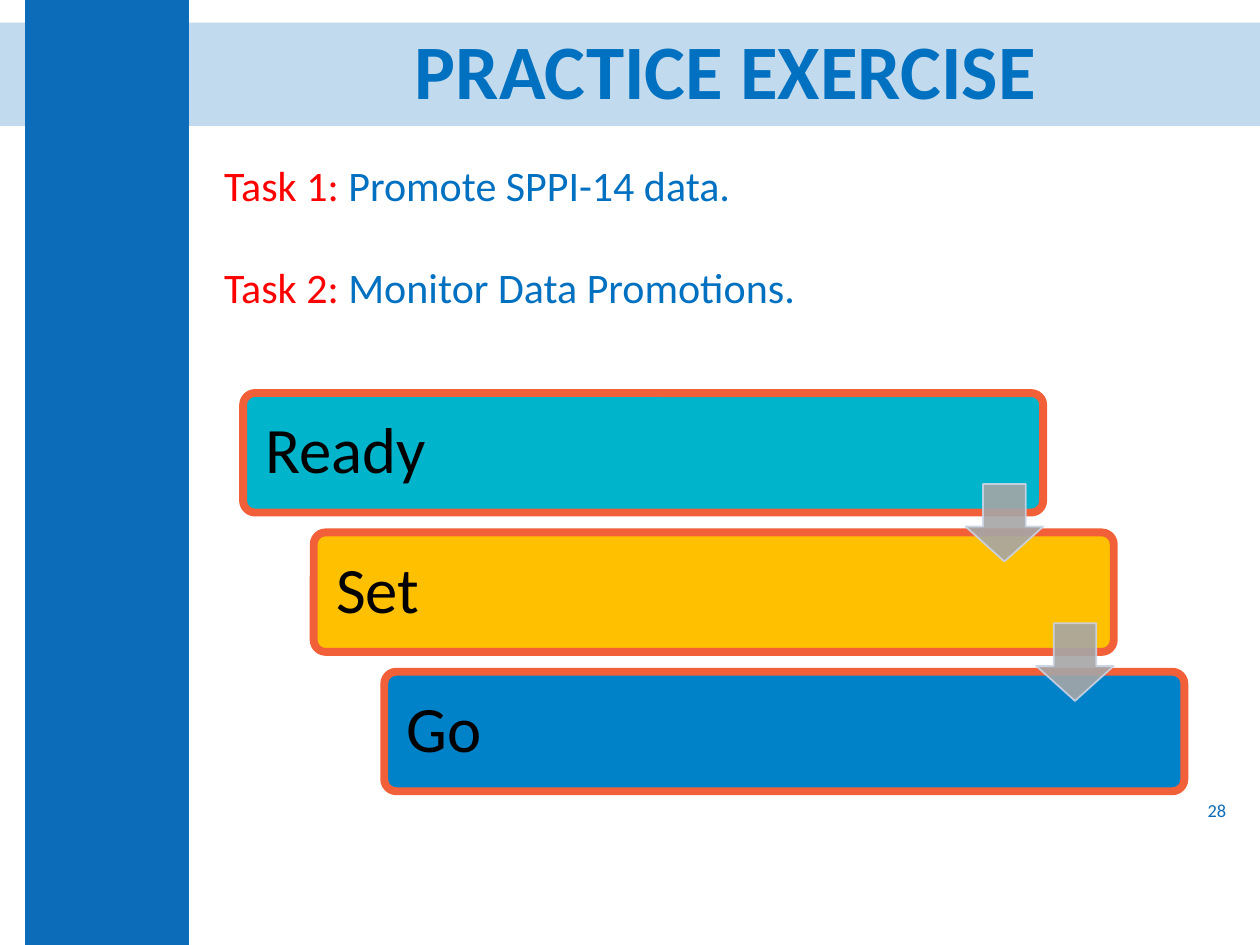
from lxml import etree
from pptx import Presentation
from pptx.dml.color import RGBColor
from pptx.enum.shapes import MSO_SHAPE as Shape
from pptx.enum.text import MSO_ANCHOR as Anchor, PP_ALIGN as Align
from pptx.oxml.ns import qn
from pptx.util import Inches, Pt

BRAND = RGBColor(0x0D, 0x6C, 0xB9)
BLUE = RGBColor(0x00, 0x70, 0xC0)
RED = RGBColor(0xFF, 0x00, 0x00)
BLACK = RGBColor(0x00, 0x00, 0x00)
ORANGE = RGBColor(0xF1, 0x60, 0x38)
TEAL = RGBColor(0x00, 0xB4, 0xCB)
AMBER = RGBColor(0xFF, 0xC0, 0x00)
AZURE = RGBColor(0x00, 0x82, 0xC8)
GREY = RGBColor(0xA6, 0xA6, 0xA6)
PALE = RGBColor(0xCC, 0xD4, 0xE6)

WIDTH, HEIGHT = 10, 7.5
HEADER_TOP, HEADER_HEIGHT = 0.18, 0.82
TASKS = [("Task 1:", " Promote SPPI-14 data."),
         ("Task 2:", " Monitor Data Promotions.")]
STEPS = [("Ready", TEAL), ("Set", AMBER), ("Go", AZURE)]


def set_alpha(fill_parent, percent):
    color = fill_parent.find(qn("a:solidFill"))[0]
    etree.SubElement(color, qn("a:alpha")).set("val", str(percent * 1000))


def style_run(run, size, color, bold=False):
    font = run.font
    font.name, font.size, font.bold = "Calibri", Pt(size), bold
    font.color.rgb = color


def add_block(slide, kind, box, fill, line=None, line_width=1):
    block = slide.shapes.add_shape(kind, *map(Inches, box))
    block.shadow.inherit = False
    block.fill.solid()
    block.fill.fore_color.rgb = fill
    if line is None:
        block.line.fill.background()
    else:
        block.line.color.rgb = line
        block.line.width = Pt(line_width)
    return block


def add_label(slide, box, text, size, color, align, bold=False):
    frame = slide.shapes.add_textbox(*map(Inches, box)).text_frame
    frame.word_wrap = True
    frame.vertical_anchor = Anchor.MIDDLE
    frame.text = text
    paragraph = frame.paragraphs[0]
    paragraph.alignment = align
    style_run(paragraph.runs[0], size, color, bold)
    return paragraph


def add_backdrop(slide):
    band = add_block(slide, Shape.RECTANGLE,
                     (0, HEADER_TOP, WIDTH, HEADER_HEIGHT), BRAND)
    set_alpha(band.element.spPr, 25)
    add_block(slide, Shape.RECTANGLE, (0.2, 0, 1.3, HEIGHT), BRAND)


def add_tasks(slide, box):
    frame = slide.shapes.add_textbox(*map(Inches, box)).text_frame
    frame.word_wrap = True
    for index, parts in enumerate(TASKS):
        paragraph = frame.add_paragraph() if index else frame.paragraphs[0]
        if index:
            paragraph.space_before = Pt(29.3)
        for part, color in zip(parts, (RED, BLUE)):
            run = paragraph.add_run()
            run.text = part
            style_run(run, 24, color)


def add_staircase(slide, box):
    """Steps shift right by equal amounts; an arrow links each to the next."""
    left, top, width, height = box
    gaps = len(STEPS) - 1
    step_width, step_height = width * 0.85, height * 0.3
    shift = (width - step_width) / gaps
    drop = (height - step_height) / gaps
    arrow = step_height * 0.65

    # Steps
    for index, (word, fill) in enumerate(STEPS):
        step = add_block(slide, Shape.ROUNDED_RECTANGLE,
                         (left + index * shift, top + index * drop,
                          step_width, step_height), fill, ORANGE, 4.5)
        step.adjustments[0] = 0.1
        frame = step.text_frame
        frame.word_wrap = True
        frame.vertical_anchor = Anchor.MIDDLE
        frame.margin_left = frame.margin_right = Inches(0.15)
        frame.margin_top = frame.margin_bottom = Inches(0.15)
        frame.text = word
        paragraph = frame.paragraphs[0]
        paragraph.alignment = Align.LEFT
        paragraph.line_spacing = 0.9
        style_run(paragraph.runs[0], 37, BLACK)

    # Arrows, drawn over the steps
    for index in range(gaps):
        link = add_block(slide, Shape.DOWN_ARROW,
                         (left + index * shift + step_width - arrow,
                          top + index * drop + step_height * 0.76,
                          arrow, arrow), GREY, PALE)
        link.adjustments[0], link.adjustments[1] = 0.55, 0.45
        properties = link.element.spPr
        for parent in (properties, properties.find(qn("a:ln"))):
            set_alpha(parent, 90)


def main():
    deck = Presentation()
    deck.slide_width, deck.slide_height = Inches(WIDTH), Inches(HEIGHT)
    slide = deck.slides.add_slide(deck.slide_layouts[6])

    add_backdrop(slide)
    title = add_label(slide, (1.81, HEADER_TOP, 7.9, HEADER_HEIGHT),
                      "PRACTICE EXERCISE", 44, BLUE, Align.CENTER, bold=True)
    title.line_spacing = 0.9
    add_label(slide, (7.58, 6.28, 2.25, 0.3), "28", 10.5, BRAND, Align.RIGHT)
    add_staircase(slide, (1.93, 3.12, 7.47, 3.16))
    add_tasks(slide, (1.68, 1.22, 8.03, 1.44))

    deck.save("out.pptx")


if __name__ == "__main__":
    main()
